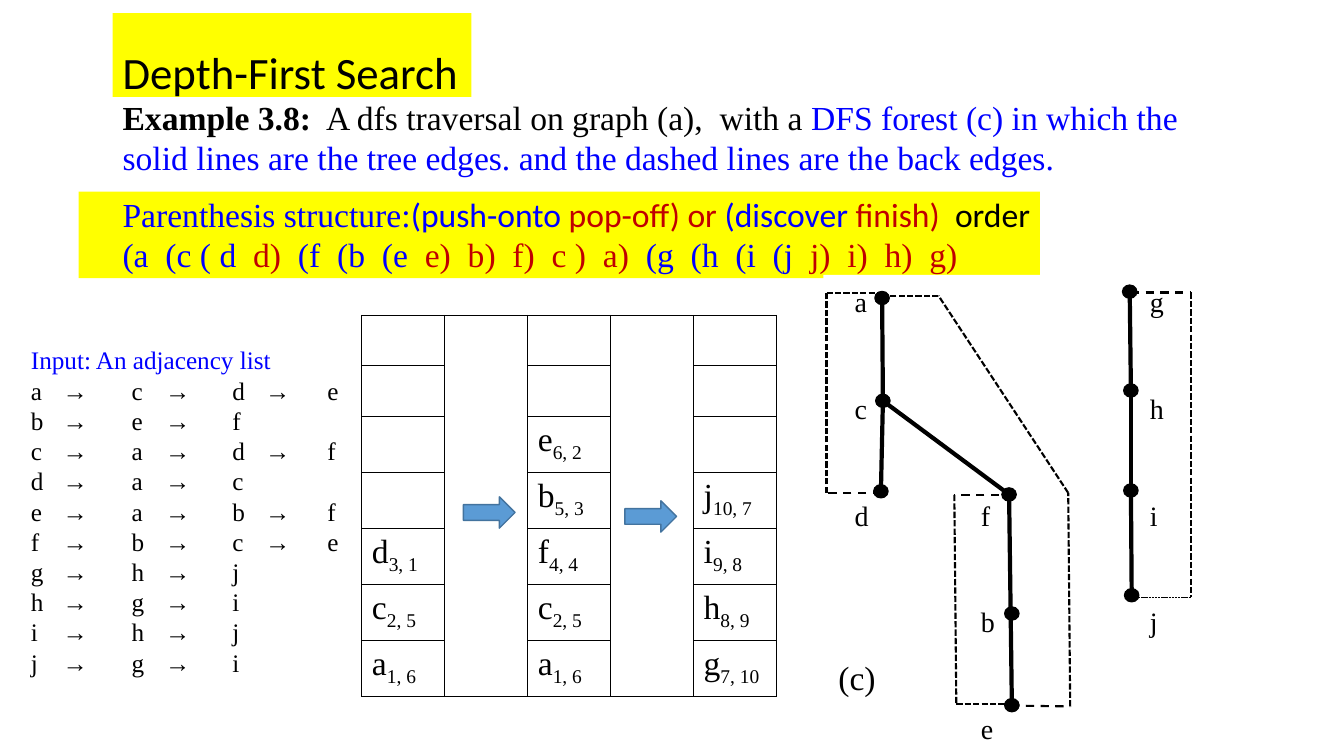
from dataclasses import dataclass

from lxml.etree import SubElement as Sub
from pptx import Presentation
from pptx.dml.color import RGBColor as RGB
from pptx.enum.dml import MSO_LINE as Dash
from pptx.enum.shapes import MSO_CONNECTOR as Link, MSO_SHAPE as Kind
from pptx.oxml.ns import qn
from pptx.util import Cm, Pt


@dataclass(frozen=True)
class Theme:
    black: str = "000000"
    white: str = "FFFFFF"
    blue: str = "0000FF"
    red: str = "C00000"
    mark: str = "FFFF00"
    arrow: str = "5B9BD5"
    edge: str = "43739E"
    serif: str = "Times New Roman"
    sans: str = "Calibri"
    title: int = 32
    body: int = 24
    label: int = 20
    small: int = 18


T = Theme()

INTRO = [
    ("Example 3.8:", T.black, T.serif, True),
    ("  A dfs traversal on graph (a),  with a ", T.black, T.serif, False),
    ("DFS forest (c) in which the solid lines are the tree edges. "
     "and the dashed lines are the back edges.", T.blue, T.serif, False),
]
RULE = [
    ("Parenthesis structure:", T.blue, T.serif, False),
    ("(push-onto ", T.blue, T.sans, False),
    ("pop-off) or ", T.red, T.sans, False),
    ("(discover ", T.blue, T.sans, False),
    ("finish)  ", T.red, T.sans, False),
    ("order", T.black, T.sans, False),
]
ORDER = [
    ("(a  (c ( d  ", T.blue, T.serif, False),
    ("d)  ", T.red, T.serif, False),
    ("(f  (b  (e  ", T.blue, T.serif, False),
    ("e)  b)  f)  c )  a)  ", T.red, T.serif, False),
    ("(g  (h  (i  (j  ", T.blue, T.serif, False),
    ("j)  i)  h)  g)", T.red, T.serif, False),
]
NEAR = ["acde", "bef", "cadf", "dac", "eabf", "fbce", "ghj", "hgi", "ihj", "jgi"]
STACKS = {
    0: ["a1, 6", "c2, 5", "d3, 1"],
    2: ["a1, 6", "c2, 5", "f4, 4", "b5, 3", "e6, 2"],
    4: ["g7, 10", "h8, 9", "i9, 8", "j10, 7"],
}
ROWS = [1.27] * 2 + [1.41] * 5
NODES = {
    "a": (22.23, 7.51), "c": (22.25, 10.1), "d": (22.2, 12.38),
    "f": (25.43, 12.46), "b": (25.5, 15.46), "e": (25.5, 17.77),
    "g": (28.47, 7.35), "h": (28.5, 9.84), "i": (28.5, 12.36), "j": (28.52, 15),
}
TREE = ["ac", "cd", "cf", "fe", "gh", "hi", "ij"]
LONG, SHORT, THIN = (Dash.DASH, 1.5), (Dash.SQUARE_DOT, 1.5), (Dash.SQUARE_DOT, 0.5)
BACK = [
    ([(22.2, 12.42), (20.83, 12.42), (20.83, 7.39), (22.2, 7.39)],
     [LONG, SHORT, SHORT]),
    ([(25.55, 12.47), (24.05, 12.47), (24.1, 17.75), (25.6, 17.75)],
     [LONG, SHORT, SHORT]),
    ([(25.48, 17.78), (26.97, 17.8), (26.92, 12.42), (23.65, 7.45), (22.23, 7.45)],
     [LONG, SHORT, SHORT, SHORT]),
    ([(28.5, 7.37), (30.02, 7.37), (30.02, 15.05), (28.52, 15.05)],
     [LONG, SHORT, THIN]),
]


def paint(item, tone):
    item.fill.solid()
    item.fill.fore_color.rgb = RGB.from_string(tone)


def style(run, size, tone=T.black, face=T.serif, bold=False):
    font = run.font
    font.size, font.name, font.bold = Pt(size), face, bold
    font.color.rgb = RGB.from_string(tone)


def add_text(slide, box, text, size, face=T.serif, tone=None):
    area = slide.shapes.add_textbox(*map(Cm, box))
    if tone:
        paint(area, tone)
    frame = area.text_frame
    frame.word_wrap = True
    frame.text = text
    for para in frame.paragraphs:
        for run in para.runs:
            style(run, size, face=face)
    return frame


def add_runs(para, parts):
    for text, tone, face, bold in parts:
        run = para.add_run()
        run.text = text
        style(run, T.body, tone, face, bold)


def set_tabs(para, stops):
    tabs = Sub(para._p.get_or_add_pPr(), qn("a:tabLst"))
    for stop in stops:
        Sub(tabs, qn("a:tab"), pos=str(Cm(stop)), algn="l")


def add_shape(slide, kind, box, tone, edge=None):
    shape = slide.shapes.add_shape(kind, *map(Cm, box))
    shape.shadow.inherit = False
    paint(shape, tone)
    if edge:
        shape.line.color.rgb = RGB.from_string(edge)
        shape.line.width = Pt(1)
    else:
        shape.line.fill.background()


def add_line(slide, start, end, width, dash=None):
    line = slide.shapes.add_connector(Link.STRAIGHT, *map(Cm, start + end))
    line.line.color.rgb = RGB.from_string(T.black)
    line.line.width = Pt(width)
    if dash:
        line.line.dash_style = dash
    Sub(line._element.spPr, qn("a:effectLst"))


def add_border(cell):
    props = cell._tc.get_or_add_tcPr()
    for side in ("lnL", "lnR", "lnT", "lnB"):
        line = Sub(props, qn(f"a:{side}"), w=str(Pt(1)))
        Sub(Sub(line, qn("a:solidFill")), qn("a:srgbClr"), val=T.black)


def add_stacks(slide):
    box = (9.12, 7.95, 10.45, sum(ROWS))
    table = slide.shapes.add_table(len(ROWS), 5, *map(Cm, box)).table
    table.first_row = table.horz_banding = False
    for col in table.columns:
        col.width = Cm(2.09)
    for row, high in zip(table.rows, ROWS):
        row.height = Cm(high)
    for cell in table.iter_cells():
        add_border(cell)
        paint(cell, T.white)
    for col in (1, 3):
        table.cell(0, col).merge(table.cell(len(ROWS) - 1, col))
    for col, stack in STACKS.items():
        for step, item in enumerate(stack, 1):
            para = table.cell(len(ROWS) - step, col).text_frame.paragraphs[0]
            for text in (item[0], item[1:]):
                run = para.add_run()
                run.text = text
                style(run, T.body)
            run._r.get_or_add_rPr().set("baseline", "-25000")


def add_forest(slide):
    text = "a\t\tg\nc\t\th\nd\tf\ti\n\tb\tj\n\te"
    frame = add_text(slide, (20.75, 6.93, 10.31, 11.81), text, T.label, tone=T.white)
    frame.margin_left = Cm(0.79)
    for para in frame.paragraphs:
        set_tabs(para, (3.18, 7.44))
        para.line_spacing = 1.15
        para.space_after = Pt(48.5)
    for points, looks in BACK:
        for start, end, (dash, width) in zip(points, points[1:], looks):
            add_line(slide, start, end, width, dash)
    for head, tail in TREE:
        add_line(slide, NODES[head], NODES[tail], 3)
    wide, high = 0.36, 0.33
    for x, y in NODES.values():
        box = (x - wide / 2, y - high / 2, wide, high)
        add_shape(slide, Kind.OVAL, box, T.black, T.black)


def add_input(slide):
    lines = ["Input: An adjacency list"] + ["\t→\t".join(row) for row in NEAR]
    frame = add_text(slide, (0.53, 8.56, 8.92, 8.71), "\n".join(lines), T.small)
    for para in frame.paragraphs[1:]:
        set_tabs(para, (0.8, 2.54, 3.38, 5.08, 5.9, 7.47))
    style(frame.paragraphs[0].runs[0], T.small, T.blue)


def add_body(slide):
    frame = add_text(slide, (2.84, 2.31, 28.68, 15.95), "", T.body)
    add_runs(frame.paragraphs[0], INTRO)
    for parts in (RULE, ORDER):
        add_runs(frame.add_paragraph(), parts)
    frame.paragraphs[1].space_before = Pt(12)


def main():
    deck = Presentation()
    deck.slide_width, deck.slide_height = Cm(33.87), Cm(19.05)
    slide = deck.slides.add_slide(deck.slide_layouts[6])
    add_shape(slide, Kind.RECTANGLE, (1.98, 4.83, 24.23, 2.18), T.mark)
    add_body(slide)
    add_forest(slide)
    add_stacks(slide)
    for x, y in ((11.68, 12.52), (15.75, 12.62)):
        add_shape(slide, Kind.RIGHT_ARROW, (x, y, 1.3, 0.79), T.arrow, T.edge)
    title = add_text(slide, (2.84, 0.33, 9.04, 2.11), "Depth-First Search",
                     T.title, T.sans, T.mark)
    title.word_wrap = False
    title.paragraphs[0].line_spacing = 1.5
    add_text(slide, (20.88, 16.43, 1.85, 1.27), "(c)", T.body)
    add_input(slide)
    deck.save("out.pptx")


if __name__ == "__main__":
    main()
